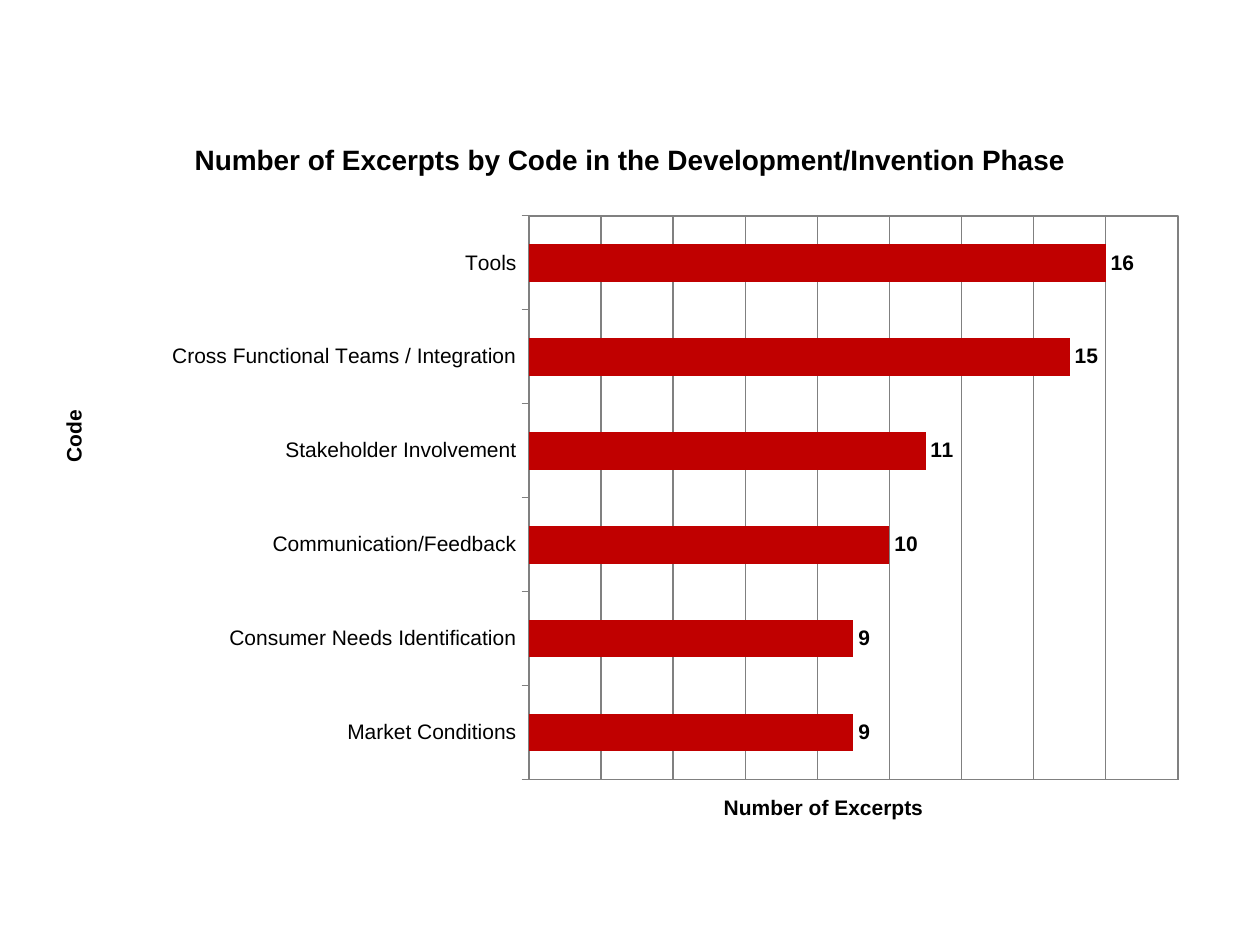
import pptx
import pptx.chart.data
import pptx.dml.color
import pptx.enum.chart
import pptx.enum.text
import pptx.oxml
import pptx.oxml.ns
import pptx.util

COLORS = {"text": "000000", "bar": "C00000", "grid": "808080"}
EXCERPTS = {
    "Tools": 16,
    "Cross Functional Teams / Integration": 15,
    "Stakeholder Involvement": 11,
    "Communication/Feedback": 10,
    "Consumer Needs Identification": 9,
    "Market Conditions": 9,
}
CHART_BOX = (32, 116, 1187, 725)
PLOT_BOX = (529, 216, 649, 564)


def px(length):
    return round(length * 914400 / 126)


def color(name):
    return pptx.dml.color.RGBColor.from_string(COLORS[name])


class SlideBuilder:
    font_name = "Arial"

    def __init__(self, deck):
        self.slide = deck.slides.add_slide(deck.slide_layouts[6])

    def style(self, font, size, bold=False):
        font.name = self.font_name
        font.size = pptx.util.Pt(size)
        font.bold = bold
        font.color.rgb = color("text")

    def add_span(self, para, text, size):
        span = para.add_run()
        span.text = text
        self.style(span.font, size, bold=True)

    def add_heading(self, text, box, size):
        shape = self.slide.shapes.add_textbox(*map(px, box))
        frame = shape.text_frame
        frame.word_wrap = True
        frame.vertical_anchor = pptx.enum.text.MSO_ANCHOR.MIDDLE
        para = frame.paragraphs[0]
        para.alignment = pptx.enum.text.PP_ALIGN.CENTER
        self.add_span(para, text, size)

    def set_layout(self, parent, index, left, top, size=None):
        """Place a chart part, given in slide px, within the chart."""
        x, y, width, height = CHART_BOX
        values = {"x": (left - x) / width, "y": (top - y) / height}
        inner = ""
        if size:
            inner = '<c:layoutTarget val="inner"/>'
            values.update(w=size[0] / width, h=size[1] / height)
        modes = '<c:xMode val="edge"/><c:yMode val="edge"/>'
        places = "".join(f'<c:{key} val="{value:.4f}"/>' for key, value in values.items())
        old = parent.find(pptx.oxml.ns.qn("c:layout"))
        if old is not None:
            parent.remove(old)
        parent.insert(index, pptx.oxml.parse_xml(
            f'<c:layout {pptx.oxml.ns.nsdecls("c")}><c:manualLayout>'
            f"{inner}{modes}{places}</c:manualLayout></c:layout>"))

    def add_axis_title(self, axis, text, left, top, rotation=0):
        title = axis.axis_title
        self.add_span(title.text_frame.paragraphs[0], text, 12)
        element = title._element
        element.find(".//" + pptx.oxml.ns.qn("a:bodyPr")).set("rot", str(rotation * 60000))
        self.set_layout(element, 1, left, top)

    def style_line(self, line):
        line.color.rgb = color("grid")
        line.width = pptx.util.Pt(0.75)

    def add_bar_chart(self, values):
        data = pptx.chart.data.CategoryChartData()
        data.categories = list(values)
        data.add_series("Series 1", list(values.values()))
        chart = self.slide.shapes.add_chart(
            pptx.enum.chart.XL_CHART_TYPE.BAR_CLUSTERED, *map(px, CHART_BOX), data).chart
        chart.has_legend = False
        chart.has_title = False
        self.style(chart.font, 10)

        # Bars and value labels
        plot = chart.plots[0]
        plot.gap_width = 150
        plot.vary_by_categories = False
        series = plot.series[0]
        series.format.fill.solid()
        series.format.fill.fore_color.rgb = color("bar")
        labels = series.data_labels
        labels.show_value = True
        labels.position = pptx.enum.chart.XL_LABEL_POSITION.OUTSIDE_END
        self.style(labels.font, 12, bold=True)

        # Category axis
        codes = chart.category_axis
        codes.reverse_order = True
        codes.major_tick_mark = pptx.enum.chart.XL_TICK_MARK.OUTSIDE
        self.style(codes.tick_labels.font, 12)
        self.style_line(codes.format.line)
        self.add_axis_title(codes, "Code", 57, 406, rotation=-90)

        # Value axis: only gridlines and title show
        counts = chart.value_axis
        counts.minimum_scale, counts.maximum_scale, counts.major_unit = 0, 18, 2
        counts.has_major_gridlines = True
        self.style_line(counts.major_gridlines.format.line)
        self.add_axis_title(counts, "Number of Excerpts", 720, 791)
        counts.visible = False

        # Plot area position and border
        area = chart._chartSpace.chart.plotArea
        self.set_layout(area, 0, *PLOT_BOX[:2], size=PLOT_BOX[2:])
        area.append(pptx.oxml.parse_xml(
            f'<c:spPr {pptx.oxml.ns.nsdecls("c", "a")}><a:noFill/><a:ln w="9525">'
            f'<a:solidFill><a:srgbClr val="{COLORS["grid"]}"/></a:solidFill></a:ln></c:spPr>'))


def main():
    deck = pptx.Presentation()
    deck.slide_width, deck.slide_height = px(1260), px(945)
    builder = SlideBuilder(deck)
    builder.add_bar_chart(EXCERPTS)
    builder.add_heading("Number of Excerpts by Code in the Development/Invention Phase",
                        (63, 94, 1134, 130), 16)
    deck.save("out.pptx")


if __name__ == "__main__":
    main()
